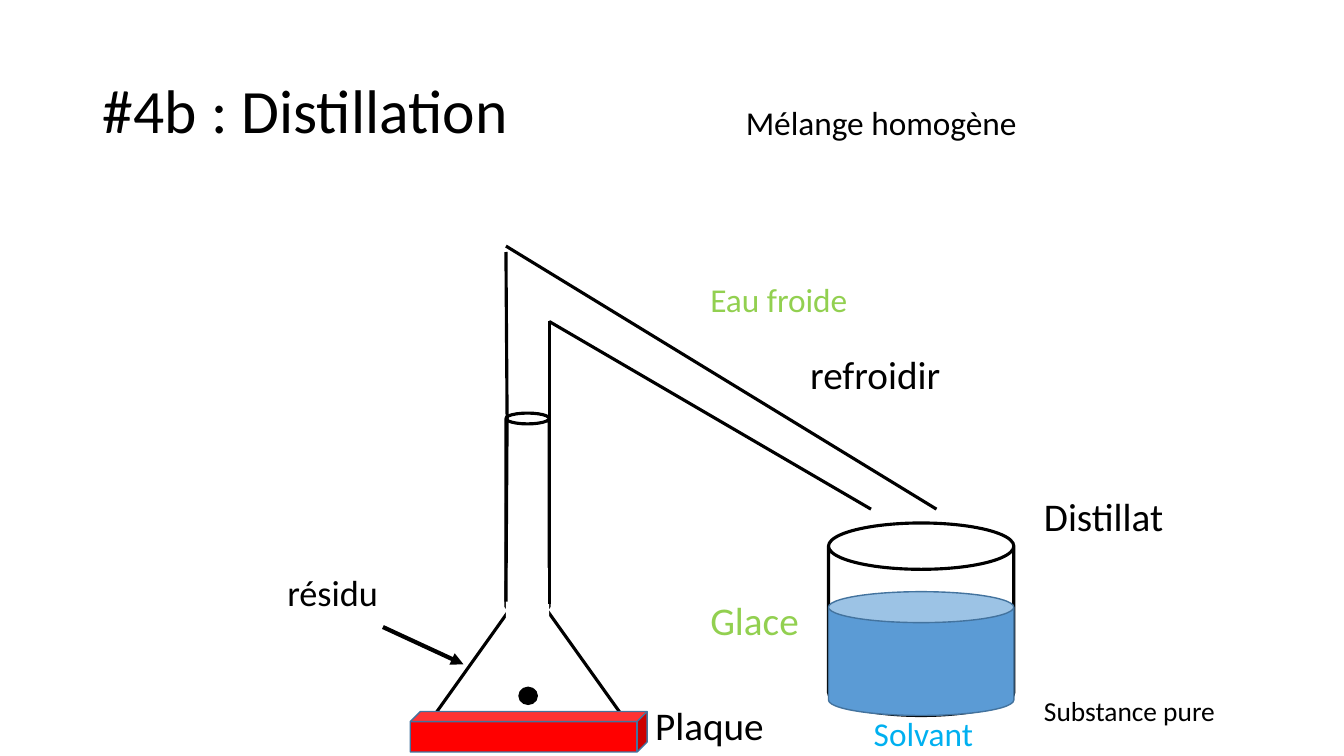
from dataclasses import dataclass
from lxml.etree import SubElement as Sub
from pptx import Presentation as Deck
from pptx.dml.color import RGBColor as Rgb
from pptx.enum.shapes import MSO_CONNECTOR as Link, MSO_SHAPE as Kind
from pptx.enum.text import MSO_ANCHOR as Anchor, MSO_AUTO_SIZE as Fit, PP_ALIGN as Align
from pptx.oxml.ns import qn
from pptx.util import Cm, Pt


@dataclass(frozen=True)
class Theme:
    font: str = "Calibri"
    black: str = "000000"
    white: str = "FFFFFF"
    green: str = "92D050"
    cyan: str = "00B0F0"
    red: str = "FF0000"
    blue: str = "5B9BD5"
    edge: str = "43739E"
    head: float = 44
    big: float = 28
    mid: float = 25.9
    note: float = 23.8
    small: float = 19.6
    thin: float = 1
    wall: float = 2.25
    bold: float = 3


def apply(item, form):
    for name, value in form.items():
        setattr(item, name, value)


class Sketch:
    def __init__(self, slide, theme):
        self.slide = slide
        self.theme = theme

    def letter(self, frame, text, size, color, gap, anchor=Anchor.TOP):
        apply(frame, {"text": text, "word_wrap": True, "auto_size": Fit.NONE,
                      "vertical_anchor": anchor})
        para = frame.paragraphs[0]
        apply(para, {"alignment": Align.LEFT, "line_spacing": gap})
        font = para.runs[0].font
        apply(font, {"name": self.theme.font, "size": Pt(size)})
        font.color.rgb = Rgb.from_string(color)
        return para

    def place(self, item, box):
        apply(item, dict(zip(("left", "top", "width", "height"), map(Cm, box))))

    def title(self, text, box):
        item = self.slide.shapes.title
        self.place(item, box)
        self.letter(item.text_frame, text, self.theme.head, self.theme.black, 0.9, Anchor.MIDDLE)

    def body(self, text, box):
        item = self.slide.placeholders[1]
        self.place(item, box)
        para = self.letter(item.text_frame, text, self.theme.note, self.theme.black, 0.7)
        para.space_before = Pt(0)
        props = para._p.get_or_add_pPr()
        props.set("marL", "0")
        props.set("indent", "0")
        Sub(props, qn("a:buNone"))

    def label(self, text, box, size, color, gap=0.8):
        item = self.slide.shapes.add_textbox(*map(Cm, box))
        para = self.letter(item.text_frame, text, size, color, gap)
        para.space_before = Pt(10)

    def shape(self, kind, box, fill=None, line=None, width=1):
        item = self.slide.shapes.add_shape(kind, *map(Cm, box))
        item.shadow.inherit = False
        if fill:
            item.fill.solid()
            item.fill.fore_color.rgb = Rgb.from_string(fill)
        else:
            item.fill.background()
        if line:
            item.line.color.rgb = Rgb.from_string(line)
            item.line.width = Pt(width)
        else:
            item.line.fill.background()

    def line(self, ends, width, arrow=False):
        item = self.slide.shapes.add_connector(Link.STRAIGHT, *map(Cm, ends))
        item.line.color.rgb = Rgb.from_string(self.theme.black)
        item.line.width = Pt(width)
        if arrow:
            Sub(item.line._get_or_add_ln(), qn("a:tailEnd"), type="triangle")
        Sub(item._element.spPr, qn("a:effectLst"))


def main():
    deck = Deck()
    apply(deck, {"slide_width": Cm(33.87), "slide_height": Cm(19.05)})
    look = Theme()
    art = Sketch(deck.slides.add_slide(deck.slide_layouts[1]), look)

    art.title("#4b : Distillation", (2.34, 1.02, 29.21, 3.68))
    art.body("Mélange homogène", (18.54, 2.72, 8, 1.1))

    left, right = 12.75, 13.84
    neck = right - left
    flask = (
        (Kind.CAN, (left, 10.41, neck, 5), look.white, look.black, look.wall),
        (Kind.ISOSCELES_TRIANGLE, (10.92, 14.71, 4.78, 3.35), None, look.black, look.wall),
        (Kind.RECTANGLE, (left, 14.31, neck, 1.68), look.white),
        (Kind.OVAL, (13.08, 17.32, 0.46, 0.43), look.black, look.black, look.thin),
        (Kind.CUBE, (10.34, 17.93, 5.97, 1.02), look.red, look.edge, look.thin),
    )
    beaker = (
        (Kind.CAN, (20.88, 13.18, 4.67, 4.85), look.white, look.black, look.wall),
        (Kind.CAN, (20.88, 14.91, 4.67, 3.12), look.blue, look.edge, look.thin),
    )
    for part in flask + beaker:
        art.shape(*part)

    tubes = (
        (12.78, 10.49, left, 15.16),
        (right, 10.44, right, 15.21),
        (left, 6.35, 12.78, 10.64),
        (right, 8.1, right, 10.64),
        (right, 8.1, 21.95, 12.83),
        (left, 6.2, 23.6, 12.83),
    )
    for ends in tubes:
        art.line(ends, look.wall)
    art.line((9.65, 15.8, 11.68, 16.74), look.bold, True)

    tall = 1.32
    labels = (
        ("résidu", (6.99, 14.45, 2.97, 1.19), look.mid, look.black),
        ("Plaque", (16.26, 17.78, 4.09, tall), look.big, look.black),
        ("Eau froide", (17.65, 7.11, 4.09, tall), look.note, look.green),
        ("refroidir", (20.17, 8.92, 4.09, tall), look.big, look.black),
        ("Glace", (17.65, 15.14, 3.2, tall), look.big, look.green),
        ("Solvant", (21.77, 18.03, 3.2, tall), look.note, look.cyan),
        ("Distillat", (26.06, 12.52, 4.09, tall), look.big, look.black),
        ("Substance pure", (26.06, 17.6, 5.08, tall), look.small, look.black, 0.7),
    )
    for label in labels:
        art.label(*label)

    deck.save("out.pptx")


if __name__ == "__main__":
    main()
